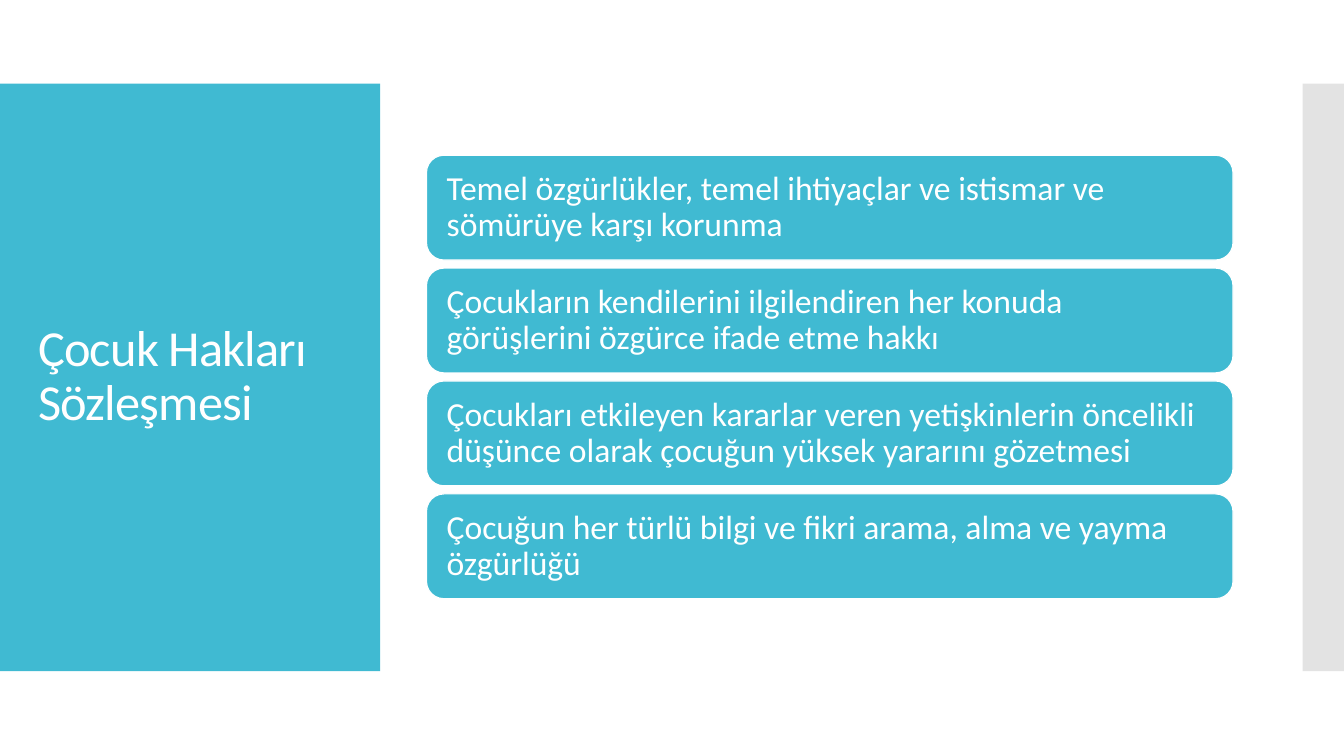
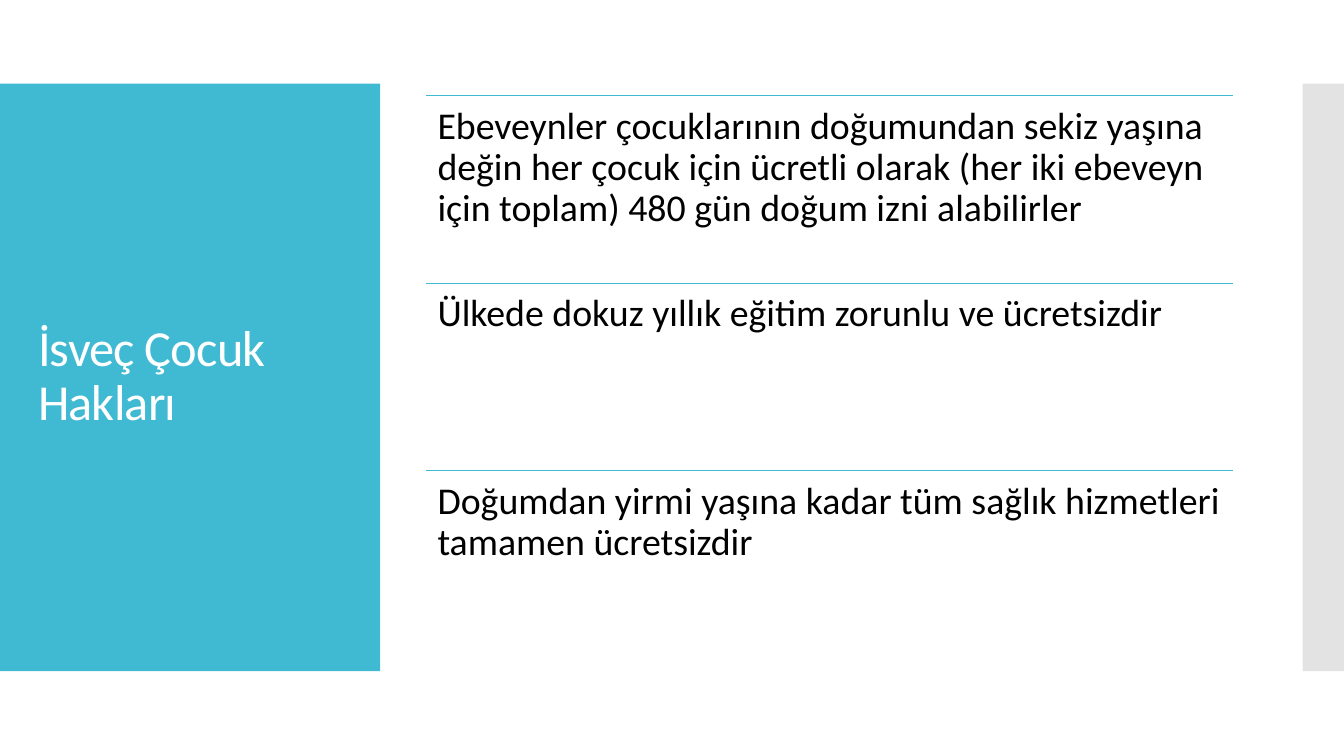
from dataclasses import dataclass

from lxml.etree import SubElement
from pptx import Presentation
from pptx.dml.color import RGBColor
from pptx.enum.shapes import MSO_CONNECTOR as Connector
from pptx.enum.shapes import MSO_SHAPE as Preset
from pptx.enum.text import MSO_ANCHOR as Anchor
from pptx.enum.text import PP_ALIGN as Align
from pptx.oxml.ns import qn
from pptx.shapes.autoshape import Shape
from pptx.slide import Slide
from pptx.util import Emu, Pt

EMU_PER_PX = 9144
SLIDE_WIDTH, SLIDE_HEIGHT = 1333, 750
FONT = "Calibri"
ACCENT, GREY, WHITE, BLACK = "40BAD2", "C8C8C8", "FFFFFF", "000000"
LINE_WIDTH = Pt(0.85)


@dataclass(frozen=True)
class Box:
    left: int
    top: int
    width: int
    height: int

    def emu(self) -> tuple[Emu, Emu, Emu, Emu]:
        return px(self.left), px(self.top), px(self.width), px(self.height)


@dataclass(frozen=True)
class TextStyle:
    size: int
    color: str
    anchor: Anchor
    inset_x: int
    inset_y: int
    spacing: int = 0


TITLE_BAND = Box(0, 83, 377, 583)
SIDE_BAND = Box(1292, 83, 41, 583)
TITLE_BOX = Box(28, 123, 322, 503)
CONTENT_LEFT, CONTENT_WIDTH = 423, 800
CARD_TOP, CARD_HEIGHT, CARD_GAP = 154, 104, 8
ROWS_TOP, ROWS_HEIGHT = 95, 559

TITLE_STYLE = TextStyle(36, WHITE, Anchor.MIDDLE, 10, 5, -60)
CARD_STYLE = TextStyle(24, WHITE, Anchor.MIDDLE, 15, 15)
ROW_STYLE = TextStyle(27, BLACK, Anchor.TOP, 11, 11)

CARDS = [
    "Temel özgürlükler, temel ihtiyaçlar ve istismar ve sömürüye karşı korunma",
    "Çocukların kendilerini ilgilendiren her konuda görüşlerini özgürce ifade etme hakkı",
    "Çocukları etkileyen kararlar veren yetişkinlerin öncelikli düşünce olarak "
    "çocuğun yüksek yararını gözetmesi",
    "Çocuğun her türlü bilgi ve fikri arama, alma ve yayma özgürlüğü",
]
ROWS = [
    "Ebeveynler çocuklarının doğumundan sekiz yaşına değin her çocuk için ücretli olarak "
    "(her iki ebeveyn için toplam) 480 gün doğum izni alabilirler",
    "Ülkede dokuz yıllık eğitim zorunlu ve ücretsizdir",
    "Doğumdan yirmi yaşına kadar tüm sağlık hizmetleri tamamen ücretsizdir",
]


def px(length: int) -> Emu:
    return Emu(length * EMU_PER_PX)


def rgb(color: str) -> RGBColor:
    return RGBColor.from_string(color)


def write_text(shape: Shape, text: str, style: TextStyle) -> None:
    frame = shape.text_frame
    frame.word_wrap = True
    frame.vertical_anchor = style.anchor
    frame.margin_left = frame.margin_right = px(style.inset_x)
    frame.margin_top = frame.margin_bottom = px(style.inset_y)
    paragraph = frame.paragraphs[0]
    paragraph.alignment = Align.LEFT
    paragraph.line_spacing = 0.9
    paragraph.font.name = FONT
    paragraph.font.size = Pt(style.size)
    paragraph.font.color.rgb = rgb(style.color)
    run = paragraph.add_run()
    run.text = text
    if style.spacing:
        run._r.get_or_add_rPr().set("spc", str(style.spacing))


def add_text(slide: Slide, box: Box, text: str, style: TextStyle) -> None:
    write_text(slide.shapes.add_textbox(*box.emu()), text, style)


def add_block(slide: Slide, preset: Preset, box: Box, color: str) -> Shape:
    block = slide.shapes.add_shape(preset, *box.emu())
    block.shadow.inherit = False
    block.fill.solid()
    block.fill.fore_color.rgb = rgb(color)
    block.line.fill.background()
    return block


def add_rule(slide: Slide, top: int) -> None:
    rule = slide.shapes.add_connector(
        Connector.STRAIGHT,
        px(CONTENT_LEFT), px(top), px(CONTENT_LEFT + CONTENT_WIDTH), px(top),
    )
    rule.line.color.rgb = rgb(ACCENT)
    rule.line.width = LINE_WIDTH
    SubElement(rule._element.spPr, qn("a:effectLst"))


def add_titled_slide(presentation: Presentation, title: str) -> Slide:
    slide = presentation.slides.add_slide(presentation.slide_layouts[6])
    add_block(slide, Preset.RECTANGLE, TITLE_BAND, ACCENT)
    side_band = add_block(slide, Preset.RECTANGLE, SIDE_BAND, GREY)
    side_color = side_band._element.spPr.find(f"{qn('a:solidFill')}/{qn('a:srgbClr')}")
    SubElement(side_color, qn("a:alpha")).set("val", "50000")
    add_text(slide, TITLE_BOX, title, TITLE_STYLE)
    return slide


def add_cards(slide: Slide, texts: list[str]) -> None:
    for index, text in enumerate(texts):
        top = CARD_TOP + index * (CARD_HEIGHT + CARD_GAP)
        box = Box(CONTENT_LEFT, top, CONTENT_WIDTH, CARD_HEIGHT)
        card = add_block(slide, Preset.ROUNDED_RECTANGLE, box, ACCENT)
        card.line.color.rgb = rgb(WHITE)
        card.line.width = LINE_WIDTH
        write_text(card, text, CARD_STYLE)


def add_rows(slide: Slide, texts: list[str]) -> None:
    height = ROWS_HEIGHT // len(texts)
    for index, text in enumerate(texts):
        top = ROWS_TOP + index * ROWS_HEIGHT // len(texts)
        add_rule(slide, top)
        add_text(slide, Box(CONTENT_LEFT, top, CONTENT_WIDTH, height), text, ROW_STYLE)


def main() -> None:
    presentation = Presentation()
    presentation.slide_width = px(SLIDE_WIDTH)
    presentation.slide_height = px(SLIDE_HEIGHT)
    add_cards(add_titled_slide(presentation, "Çocuk Hakları Sözleşmesi"), CARDS)
    add_rows(add_titled_slide(presentation, "İsveç Çocuk Hakları"), ROWS)
    presentation.save("out.pptx")


if __name__ == "__main__":
    main()
